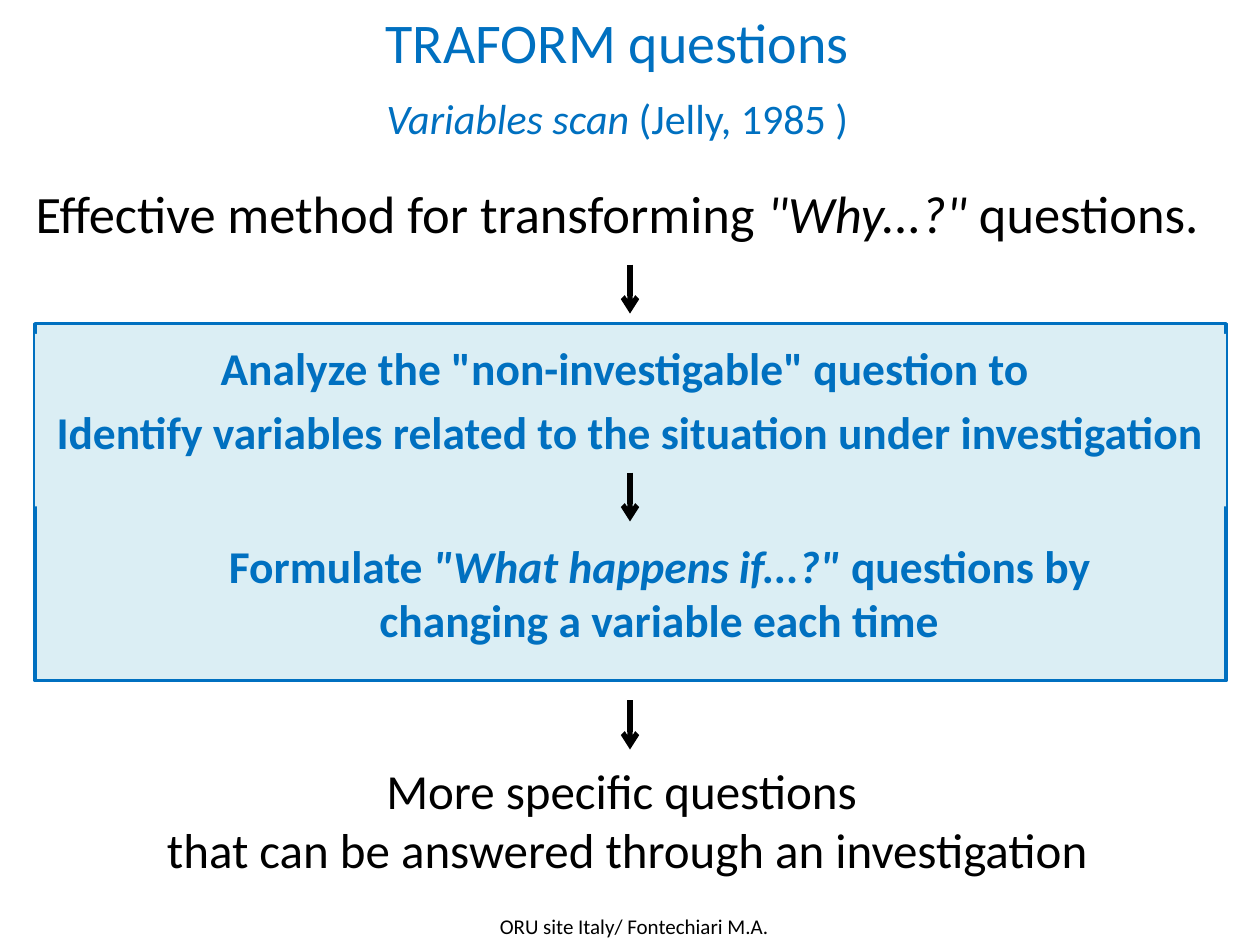
"""Build a slide on transforming "Why...?" questions into investigable ones."""
from lxml import etree
from pptx import Presentation
from pptx.dml.color import RGBColor
from pptx.enum import shapes, text
from pptx.oxml import ns
from pptx.util import Pt

BLUE = RGBColor(0x00, 0x70, 0xC0)
PALE = RGBColor(0xDB, 0xEE, 0xF4)
BLACK = RGBColor(0, 0, 0)
FONT = "Calibri"
PLAIN, ITALIC = False, True

TITLE = [[("TRAFORM questions\v", PLAIN, 32), ("Variables scan ", ITALIC, 24),
          ("(Jelly, 1985 )", PLAIN, 24)]]
METHOD = [[("Effective method for transforming ", PLAIN), ('"Why...?" ', ITALIC),
           ("questions. ", PLAIN)]]
ANALYZE = [[('Analyze the "non-investigable" question to ', PLAIN)],
           [("Identify variables related to the situation under investigation", PLAIN)]]
FORMULATE = [[("Formulate ", PLAIN), ('"What happens if...?" ', ITALIC),
              ("questions by changing a variable each time", PLAIN)]]
RESULT = [[("More specific questions ", PLAIN)],
          [("that can be answered through an investigation", PLAIN)]]
CREDIT = [[("ORU site Italy/ Fontechiari M.A.", PLAIN)]]

FRAME = (20, 185, 680.5, 204)
ANALYZE_PANEL = (20, 190.8, 680.5, 98.6)
FORMULATE_PANEL = (70.5, 303.8, 572.5, 70.6)
ARROW_X, ARROW_LENGTH = 360, 28
ARROW_TOPS = (151.2, 270, 400.3)


def write(box, paragraphs, size=12, color=BLACK, bold=False, before=0, spacing=None,
          margins=(7.2, 3.6, 7.2, 3.6), anchor=text.MSO_ANCHOR.TOP):
    frame = box.text_frame
    frame.word_wrap = True
    frame.auto_size = text.MSO_AUTO_SIZE.NONE
    frame.vertical_anchor = anchor
    (frame.margin_left, frame.margin_top,
     frame.margin_right, frame.margin_bottom) = map(Pt, margins)
    for index, spans in enumerate(paragraphs):
        para = frame.add_paragraph() if index else frame.paragraphs[0]
        para.alignment = text.PP_ALIGN.CENTER
        para.space_before = Pt(before)
        if spacing:
            para.line_spacing = Pt(spacing)
        for words, italic, *own_size in spans:
            span = para.add_run()
            span.text = words.rstrip("\v")
            font = span.font
            font.name, font.bold, font.italic = FONT, bold, italic
            font.size = Pt(own_size[0] if own_size else size)
            font.color.rgb = color
            if words.endswith("\v"):
                para.add_line_break()


def add_panel(page, place, line=None):
    panel = page.shapes.add_shape(shapes.MSO_SHAPE.RECTANGLE, *map(Pt, place))
    panel.shadow.inherit = False
    panel.fill.solid()
    panel.fill.fore_color.rgb = PALE
    if line:
        panel.line.color.rgb = line
        panel.line.width = Pt(2)
    else:
        panel.line.fill.background()
    return panel


def add_label(page, place, paragraphs, **style):
    write(page.shapes.add_textbox(*map(Pt, place)), paragraphs, **style)


def add_arrow(page, top):
    arrow = page.shapes.add_connector(
        shapes.MSO_CONNECTOR.STRAIGHT, Pt(ARROW_X), Pt(top), Pt(ARROW_X), Pt(top + ARROW_LENGTH))
    arrow.line.color.rgb = BLACK
    arrow.line.width = Pt(3)
    etree.SubElement(arrow.line._get_or_add_ln(), ns.qn("a:tailEnd"), type="arrow")
    etree.SubElement(arrow._element.spPr, ns.qn("a:effectLst"))


def main():
    deck = Presentation()
    deck.slide_width, deck.slide_height = Pt(720), Pt(540)
    page = deck.slides.add_slide(deck.slide_layouts[5])

    title = page.shapes.title
    title.left, title.top, title.width, title.height = map(Pt, (0, 2.2, 705.6, 78.5))
    write(title, TITLE, color=BLUE, before=2.8, spacing=39, margins=(0, 2.9, 0, 0),
          anchor=text.MSO_ANCHOR.MIDDLE)

    add_panel(page, FRAME, line=BLUE)
    emphasis = {"size": 26, "color": BLUE, "bold": True, "before": 5.2}
    write(add_panel(page, ANALYZE_PANEL), ANALYZE, **emphasis)
    write(add_panel(page, FORMULATE_PANEL), FORMULATE, margins=(47.5, 3.6, 7.2, 3.6), **emphasis)

    add_label(page, (8.6, 100, 694.8, 46), METHOD, size=30)
    add_label(page, (-20, 431.3, 756.7, 80), RESULT, size=28)
    add_label(page, (167, 518.4, 391, 21.6), CREDIT)
    for top in ARROW_TOPS:
        add_arrow(page, top)
    deck.save("out.pptx")


if __name__ == "__main__":
    main()
